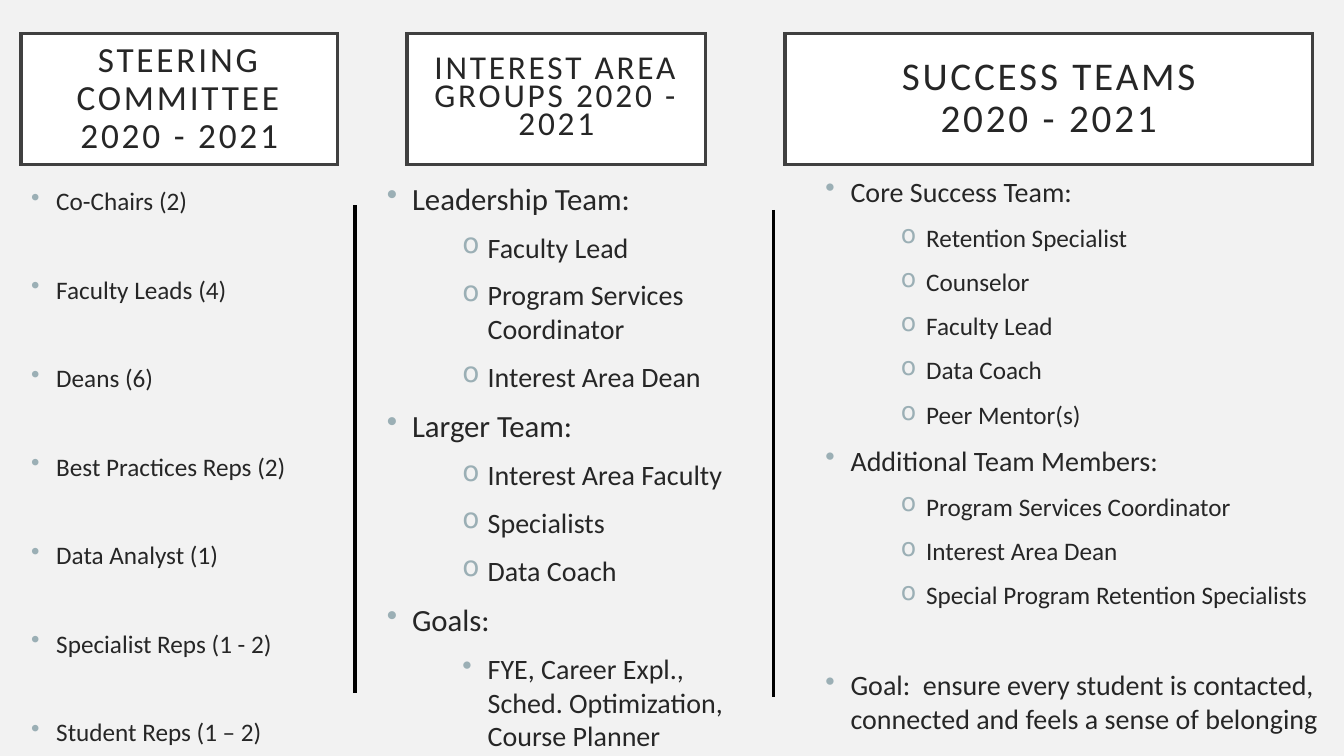
from dataclasses import dataclass

from lxml import etree
from pptx import Presentation
from pptx.dml.color import RGBColor
from pptx.enum.shapes import MSO_CONNECTOR, MSO_SHAPE
from pptx.enum.text import MSO_ANCHOR, PP_ALIGN
from pptx.oxml.ns import qn
from pptx.util import Pt

RECT = MSO_SHAPE.RECTANGLE
STRAIGHT = MSO_CONNECTOR.STRAIGHT
MIDDLE = MSO_ANCHOR.MIDDLE
CENTER = PP_ALIGN.CENTER

FACE = "Calibri"
COLORS = {"back": "F2F2F2", "box": "FFFFFF", "edge": "404040",
          "text": "262626", "mark": "9BAFB5", "rule": "000000"}
GAP = 10
WIDE = 41.6  # space before an item that stands apart


@dataclass
class Head:
    left: float
    width: float
    size: float
    pitch: float
    lines: list[str]


@dataclass
class Item:
    text: str
    deep: bool = False
    mark: str = "•"
    gap: float = GAP


@dataclass
class Column:
    left: float
    top: float
    width: float
    height: float
    size: float
    items: list[Item]


@dataclass
class Rule:
    x: float
    top: float
    end: float


def subs(*names: str) -> list[Item]:
    return [Item(name, True, "o") for name in names]


HEADS = [
    Head(15.1, 226.1, 25.2, 0.9, ["STEERING COMMITTEE 2020 - 2021"]),
    Head(290.9, 213.1, 23.8, 0.7, ["INTEREST AREA GROUPS 2020 - 2021"]),
    Head(560.9, 376.6, 28, 0.9, ["SUCCESS TEAMS", "2020 - 2021"]),
]

ROLES = ["Co-Chairs (2)", "Faculty Leads (4)", "Deans (6)",
         "Best Practices Reps (2)", "Data Analyst (1)",
         "Specialist Reps (1 - 2)", "Student Reps (1 – 2)"]

COLUMNS = [
    Column(15.1, 128.9, 226.1, 373, 18,
           [Item(role, gap=WIDE if i else GAP) for i, role in enumerate(ROLES)]),
    Column(269.3, 124.6, 254.9, 385.9, 22, [
        Item("Leadership Team:"),
        *subs("Faculty Lead", "Program Services Coordinator",
              "Interest Area Dean"),
        Item("Larger Team:"),
        *subs("Interest Area Faculty", "Specialists", "Data Coach"),
        Item("Goals:"),
        Item("FYE, Career Expl., Sched. Optimization, Course Planner", True),
    ]),
    Column(582.5, 121, 370.1, 404.6, 20, [
        Item("Core Success Team:"),
        *subs("Retention Specialist", "Counselor", "Faculty Lead",
              "Data Coach", "Peer Mentor(s)"),
        Item("Additional Team Members:"),
        *subs("Program Services Coordinator", "Interest Area Dean",
              "Special Program Retention Specialists"),
        Item("Goal:  ensure every student is contacted, connected and feels "
             "a sense of belonging", gap=WIDE),
    ]),
]

RULES = [Rule(253.6, 146.5, 495), Rule(552.6, 150, 498)]


def color(name: str) -> RGBColor:
    return RGBColor.from_string(COLORS[name])


def style(para, size: float) -> None:
    para.font.name = FACE
    para.font.size = Pt(size)
    para.font.color.rgb = color("text")


def bullet(para, item: Item) -> None:
    props = para._p.get_or_add_pPr()
    props.set("marL", str(Pt(72 if item.deep else 18)))
    props.set("indent", str(Pt(-18)))
    tint = etree.SubElement(props, qn("a:buClr"))
    etree.SubElement(tint, qn("a:srgbClr"), val=COLORS["mark"])
    etree.SubElement(props, qn("a:buChar"), char=item.mark)


def draw_head(slide, head: Head) -> None:
    box = slide.shapes.add_shape(RECT, Pt(head.left), Pt(23.8),
                                 Pt(head.width), Pt(93.6))
    box.shadow.inherit = False
    box.fill.solid()
    box.fill.fore_color.rgb = color("box")
    box.line.color.rgb = color("edge")
    box.line.width = Pt(2.5)
    edge = box._element.spPr.find(qn("a:ln"))
    etree.SubElement(edge, qn("a:miter"), lim="800000")
    frame = box.text_frame
    frame.word_wrap = True
    frame.vertical_anchor = MIDDLE
    frame.margin_left = frame.margin_right = Pt(14.4)
    frame.margin_top = frame.margin_bottom = Pt(14.4)
    for i, line in enumerate(head.lines):
        para = frame.add_paragraph() if i else frame.paragraphs[0]
        para.text = line
        para.alignment = CENTER
        para.line_spacing = head.pitch
        style(para, head.size)
        para._p.pPr.find(qn("a:defRPr")).set("spc", "200")


def draw_column(slide, col: Column) -> None:
    box = slide.shapes.add_textbox(Pt(col.left), Pt(col.top),
                                   Pt(col.width), Pt(col.height))
    frame = box.text_frame
    frame.word_wrap = True
    for i, item in enumerate(col.items):
        para = frame.add_paragraph() if i else frame.paragraphs[0]
        para.text = item.text
        para.level = 3 if item.deep else 0
        para.space_before = Pt(item.gap)
        bullet(para, item)
        style(para, col.size - 2 if item.deep else col.size)


def draw_rule(slide, rule: Rule) -> None:
    line = slide.shapes.add_connector(STRAIGHT, Pt(rule.x), Pt(rule.top),
                                      Pt(rule.x), Pt(rule.end))
    line.line.color.rgb = color("rule")
    line.line.width = Pt(2.25)
    etree.SubElement(line._element.spPr, qn("a:effectLst"))


def main() -> None:
    deck = Presentation()
    deck.slide_width, deck.slide_height = Pt(960), Pt(540)
    slide = deck.slides.add_slide(deck.slide_layouts[6])
    slide.background.fill.solid()
    slide.background.fill.fore_color.rgb = color("back")

    # Headings
    for head in HEADS:
        draw_head(slide, head)
    # Lists
    for col in COLUMNS:
        draw_column(slide, col)
    # Dividers
    for rule in RULES:
        draw_rule(slide, rule)

    deck.save("out.pptx")


if __name__ == "__main__":
    main()
